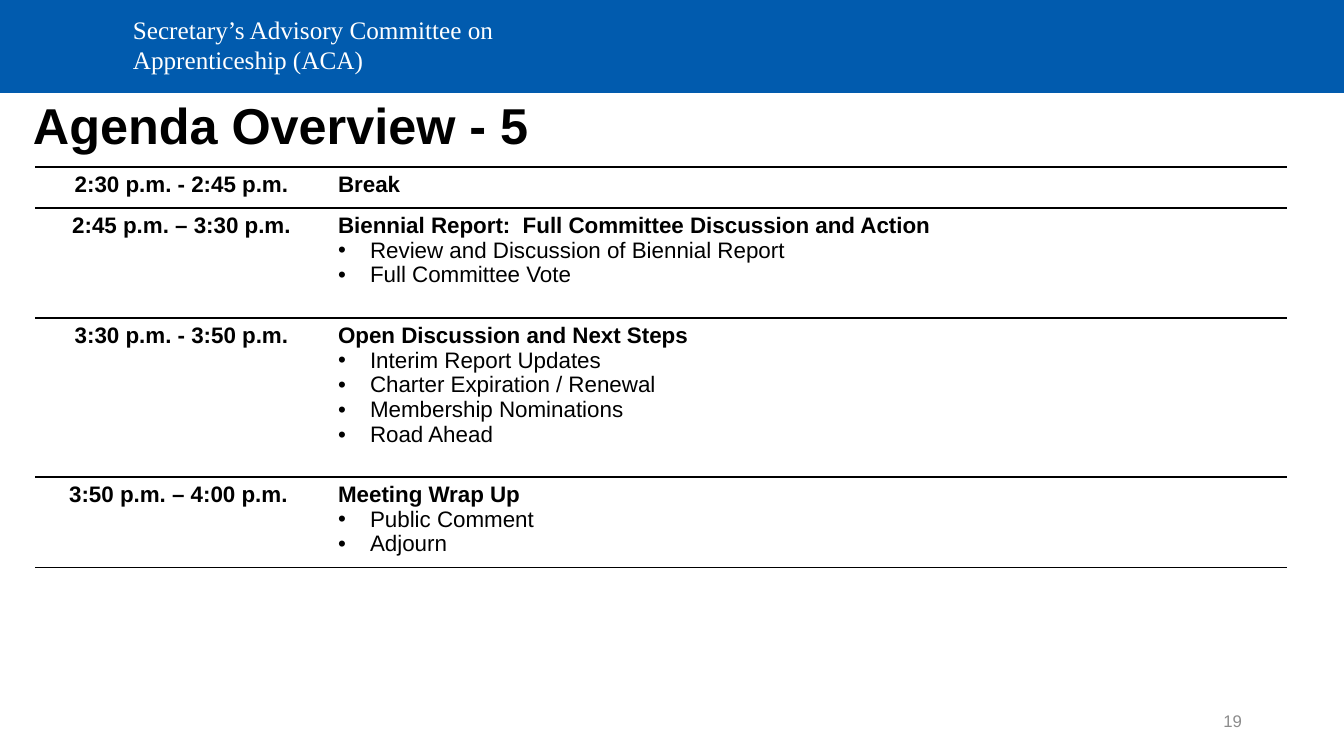
from dataclasses import dataclass

from lxml.etree import SubElement
from pptx import Presentation
from pptx.dml.color import RGBColor
from pptx.enum.shapes import MSO_SHAPE
from pptx.enum.text import MSO_ANCHOR, PP_ALIGN
from pptx.oxml.ns import qn
from pptx.util import Pt

EMU_PER_PX = 914400 / 100.8
BULLET_INDENT = 32


@dataclass(frozen=True)
class Style:
    size: int
    color: str = "000000"
    bold: bool = False
    font: str = "Arial"


@dataclass(frozen=True)
class Label:
    text: str
    box: tuple[int, int, int, int]
    style: Style
    align: PP_ALIGN = PP_ALIGN.LEFT
    anchor: MSO_ANCHOR = MSO_ANCHOR.MIDDLE
    line_spacing: float = 1.0


@dataclass(frozen=True)
class Session:
    time: str
    topic: str
    height: int
    points: tuple[str, ...] = ()


HEADING = Style(16, bold=True)
POINT = Style(16)

LABELS = [
    Label("Secretary’s Advisory Committee on Apprenticeship (ACA)", (123, 9, 390, 72),
          Style(18, "FFFFFF", font="Times New Roman"), anchor=MSO_ANCHOR.TOP),
    Label("Agenda Overview - 5", (23, 88, 1185, 80), Style(36, bold=True), line_spacing=0.9),
    Label("19", (950, 701, 302, 40), Style(12, "8C8C8C"), PP_ALIGN.RIGHT),
]

AGENDA = [
    Session("2:30 p.m. - 2:45 p.m.", "Break", 41),
    Session("2:45 p.m. – 3:30 p.m.", "Biennial Report:  Full Committee Discussion and Action", 110,
            ("Review and Discussion of Biennial Report", "Full Committee Vote")),
    Session("3:30 p.m. - 3:50 p.m.", "Open Discussion and Next Steps", 159,
            ("Interim Report Updates", "Charter Expiration / Renewal",
             "Membership Nominations", "Road Ahead")),
    Session("3:50 p.m. – 4:00 p.m. ", "Meeting Wrap Up", 85, ("Public Comment", "Adjourn")),
]


def px(length: int) -> int:
    return round(length * EMU_PER_PX)


def rgb(color: str) -> RGBColor:
    return RGBColor.from_string(color)


def add_run(paragraph, text: str, style: Style) -> None:
    run = paragraph.add_run()
    run.text = text
    run.font.size = Pt(style.size)
    run.font.name = style.font
    run.font.bold = style.bold
    run.font.color.rgb = rgb(style.color)


def add_label(slide, label: Label) -> None:
    frame = slide.shapes.add_textbox(*map(px, label.box)).text_frame
    frame.word_wrap = True
    frame.vertical_anchor = label.anchor
    paragraph = frame.paragraphs[0]
    paragraph.alignment = label.align
    paragraph.line_spacing = label.line_spacing
    add_run(paragraph, label.text, label.style)


def add_point(frame, text: str) -> None:
    paragraph = frame.add_paragraph()
    properties = paragraph._p.get_or_add_pPr()
    properties.set("marL", str(px(BULLET_INDENT)))
    properties.set("indent", str(-px(BULLET_INDENT)))
    SubElement(properties, qn("a:buFont"), typeface="Arial")
    SubElement(properties, qn("a:buChar"), char="•")
    add_run(paragraph, text, POINT)


def format_cell(cell) -> None:
    """Rule the cell above and below only, on a faint white fill."""
    properties = cell._tc.get_or_add_tcPr()
    for side in ("lnL", "lnR"):
        SubElement(SubElement(properties, qn(f"a:{side}"), w="0"), qn("a:noFill"))
    for side in ("lnT", "lnB"):
        line = SubElement(properties, qn(f"a:{side}"), w=str(Pt(1)))
        SubElement(SubElement(line, qn("a:solidFill")), qn("a:srgbClr"), val="000000")
    cell.fill.solid()
    cell.fill.fore_color.rgb = rgb("FFFFFF")
    white = properties.find(qn("a:solidFill")).find(qn("a:srgbClr"))
    SubElement(white, qn("a:alpha"), val="20000")


def add_agenda(slide, left: int, top: int, widths: tuple[int, int]) -> None:
    height = sum(session.height for session in AGENDA)
    table = slide.shapes.add_table(
        len(AGENDA), len(widths), px(left), px(top), px(sum(widths)), px(height)).table
    table.first_row = False
    table.horz_banding = False
    for column, width in zip(table.columns, widths):
        column.width = px(width)
    for row, session in zip(table.rows, AGENDA):
        row.height = px(session.height)
        time, topic = row.cells
        for cell, text in ((time, session.time), (topic, session.topic)):
            format_cell(cell)
            add_run(cell.text_frame.paragraphs[0], text, HEADING)
        time.text_frame.paragraphs[0].alignment = PP_ALIGN.CENTER
        for point in session.points:
            add_point(topic.text_frame, point)


def add_banner(slide) -> None:
    banner = slide.shapes.add_shape(MSO_SHAPE.RECTANGLE, 0, 0, px(1344), px(93))
    banner.shadow.inherit = False
    banner.fill.solid()
    banner.fill.fore_color.rgb = rgb("015BAE")
    banner.line.fill.background()


def main() -> None:
    deck = Presentation()
    deck.slide_width, deck.slide_height = px(1344), px(756)
    slide = deck.slides.add_slide(deck.slide_layouts[6])
    add_banner(slide)
    for label in LABELS:
        add_label(slide, label)
    add_agenda(slide, 35, 167, (293, 959))
    deck.save("out.pptx")


if __name__ == "__main__":
    main()
